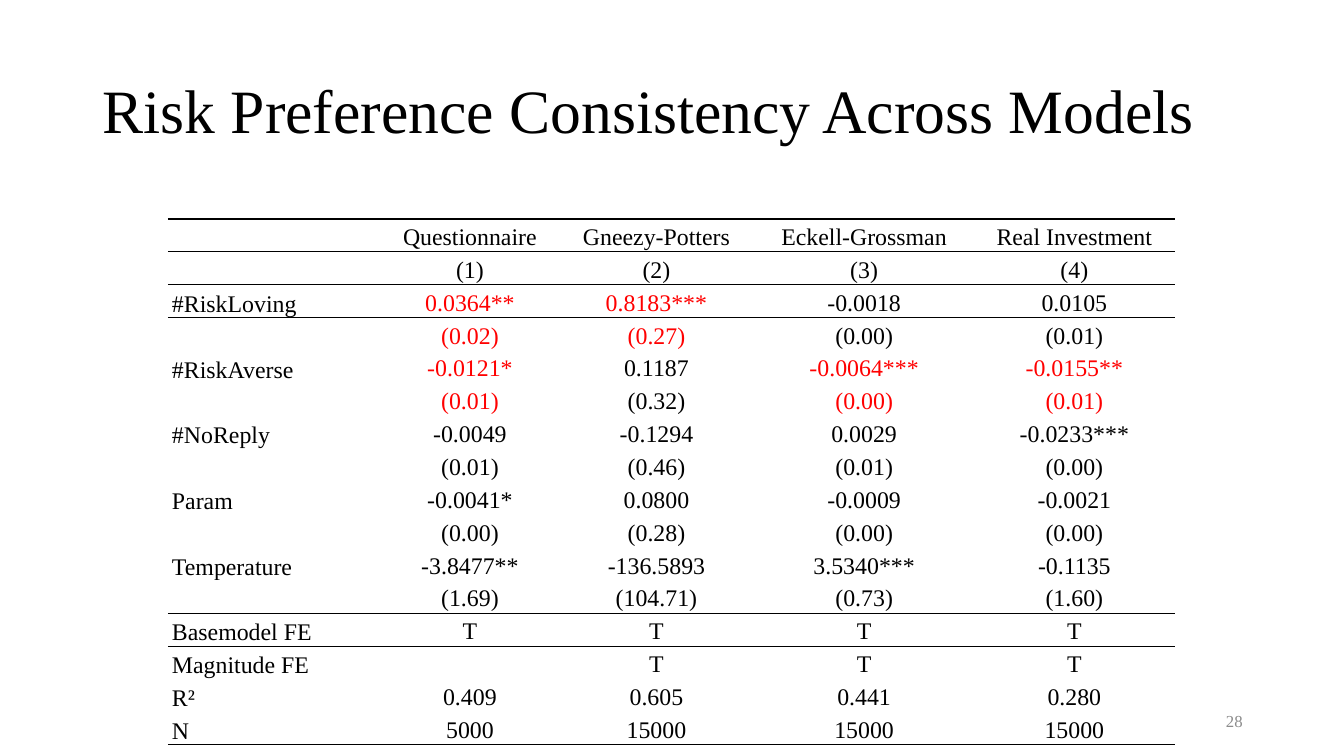
from lxml import etree
from pptx import Presentation
from pptx import util as u
from pptx.dml.color import RGBColor
from pptx.enum import text as tx
from pptx.oxml import ns

WIDE, HIGH = u.Inches(13.33), u.Inches(7.5)
FACE = "Times New Roman"
BLACK, RED, GREY, WHITE = "000000", "FF0000", "8C8C8C", "FFFFFF"
PLAIN = "{2D5ABB26-0587-4C30-8999-92F81FD0307C}"
LEFT, MID, RIGHT = tx.PP_ALIGN.LEFT, tx.PP_ALIGN.CENTER, tx.PP_ALIGN.RIGHT

COLS = [2.12, 1.75, 1.95, 2.17, 2]
TALL = [0.32, 0.31, 0.32]
BODY = 0.3
RULES = {0: 2.25, 1: 1, 2: 1, 12: 1, 16: 1}
HOT = {3: (1, 2), 4: (1, 2), 5: (1, 3, 4), 6: (1, 3, 4)}
ROWS = [
    ["", "", "", "", ""],
    ["", "Questionnaire", "Gneezy-Potters", "Eckell-Grossman", "Real Investment"],
    ["", "(1)", "(2)", "(3)", "(4)"],
    ["#RiskLoving", "0.0364**", "0.8183***", "-0.0018", "0.0105"],
    ["", "(0.02)", "(0.27)", "(0.00)", "(0.01)"],
    ["#RiskAverse", "-0.0121*", "0.1187", "-0.0064***", "-0.0155**"],
    ["", "(0.01)", "(0.32)", "(0.00)", "(0.01)"],
    ["#NoReply", "-0.0049", "-0.1294", "0.0029", "-0.0233***"],
    ["", "(0.01)", "(0.46)", "(0.01)", "(0.00)"],
    ["Param", "-0.0041*", "0.0800", "-0.0009", "-0.0021"],
    ["", "(0.00)", "(0.28)", "(0.00)", "(0.00)"],
    ["Temperature", "-3.8477**", "-136.5893", "3.5340***", "-0.1135"],
    ["", "(1.69)", "(104.71)", "(0.73)", "(1.60)"],
    ["Basemodel FE", "T", "T", "T", "T"],
    ["Magnitude FE", "", "T", "T", "T"],
    ["R²", "0.409", "0.605", "0.441", "0.280"],
    ["N", "5000", "15000", "15000", "15000"],
]


def color(code):
    return RGBColor.from_string(code)


def write(para, words, size, code, align, space):
    para.text = words
    para.alignment = align
    para.line_spacing = space
    para.font.name = FACE
    para.font.size = u.Pt(size)
    para.font.color.rgb = color(code)


def label(slide, box, words, size, code, align, space=1.0):
    x, y, w, h = box
    shape = slide.shapes.add_textbox(
        int(x * WIDE), int(y * HIGH), int(w * WIDE), int(h * HIGH))
    frame = shape.text_frame
    frame.word_wrap = True
    frame.vertical_anchor = tx.MSO_ANCHOR.MIDDLE
    write(frame.paragraphs[0], words, size, code, align, space)


def edge(cell, tag, points):
    line = etree.Element(ns.qn(tag), w=str(u.Pt(points)))
    fill = etree.SubElement(line, ns.qn("a:solidFill"))
    etree.SubElement(fill, ns.qn("a:srgbClr"), val=BLACK)
    cell._tc.get_or_add_tcPr().insert(0, line)


def fill_cell(cell, row, col, words):
    cell.margin_left = cell.margin_right = u.Inches(0.04)
    cell.margin_top = cell.margin_bottom = 0
    cell.fill.solid()
    cell.fill.fore_color.rgb = color(WHITE)
    cell.vertical_anchor = tx.MSO_ANCHOR.MIDDLE if col else tx.MSO_ANCHOR.BOTTOM
    if words:
        code = RED if col in HOT.get(row, ()) else BLACK
        para = cell.text_frame.paragraphs[0]
        write(para, words, 17, code, MID if col else LEFT, 1.15)
    for tag, rule in (("a:lnB", row), ("a:lnT", row - 1)):
        if rule in RULES:
            edge(cell, tag, RULES[rule])


def results(slide, x, y):
    tall = TALL + [BODY] * (len(ROWS) - len(TALL))
    table = slide.shapes.add_table(
        len(ROWS), len(COLS), int(x * WIDE), int(y * HIGH),
        u.Inches(sum(COLS)), u.Inches(sum(tall))).table
    table.first_row = table.horz_banding = False
    table._tbl.tblPr.find(ns.qn("a:tableStyleId")).text = PLAIN
    for col, width in zip(table.columns, COLS):
        col.width = u.Inches(width)
    for r, (line, height) in enumerate(zip(ROWS, tall)):
        table.rows[r].height = u.Inches(height)
        for c, words in enumerate(line):
            fill_cell(table.cell(r, c), r, c, words)


def main():
    deck = Presentation()
    deck.slide_width, deck.slide_height = WIDE, HIGH
    slide = deck.slides.add_slide(deck.slide_layouts[6])
    label(slide, (0.069, 0.053, 0.863, 0.193),
          "Risk Preference Consistency Across Models", 44, BLACK, LEFT, 0.9)
    label(slide, (0.707, 0.927, 0.225, 0.053), "28", 12, GREY, RIGHT)
    results(slide, 0.125, 0.247)
    deck.save("out.pptx")


if __name__ == "__main__":
    main()
